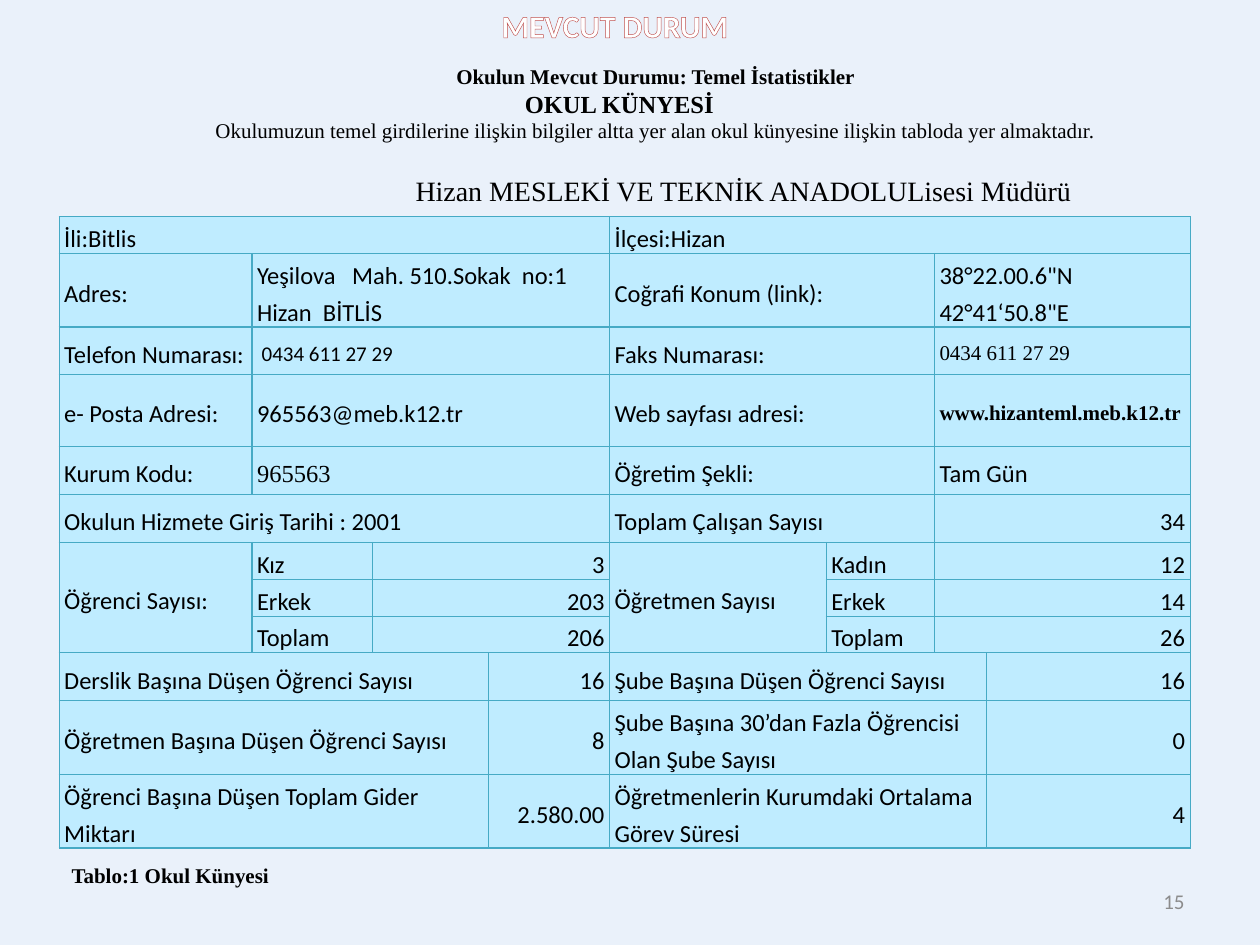
from typing import NamedTuple

from lxml import etree
from pptx import Presentation
from pptx.dml.color import RGBColor
from pptx.enum.text import MSO_ANCHOR, MSO_AUTO_SIZE, PP_ALIGN
from pptx.oxml.ns import qn
from pptx.util import Pt

LEFT, CENTER, RIGHT = PP_ALIGN.LEFT, PP_ALIGN.CENTER, PP_ALIGN.RIGHT
TOP, MIDDLE = MSO_ANCHOR.TOP, MSO_ANCHOR.MIDDLE
GROW = MSO_AUTO_SIZE.SHAPE_TO_FIT_TEXT
SANS, SERIF = "Calibri", "Times New Roman"
BLACK, WHITE, GRAY = "000000", "FFFFFF", "8C8C8C"
BACK, FILL, EDGE, RED = "EAF1FA", "BFECFF", "46AAC5", "C0504D"


class Line(NamedTuple):
    text: str
    size: float = 12
    face: str = SERIF
    bold: bool = False
    align: PP_ALIGN = LEFT
    color: str = BLACK
    indent: float = 0


class Box(NamedTuple):
    left: float
    top: float
    width: float
    height: float
    lines: list[Line]
    wrap: bool = True
    anchor: MSO_ANCHOR = TOP
    pad: float = 3.6


class Cell(NamedTuple):
    line: Line
    wide: int = 1
    tall: int = 1


def label(text: str, wide: int = 1, tall: int = 1) -> Cell:
    return Cell(Line(text, 14, SANS), wide, tall)


def count(text: str, wide: int = 1) -> Cell:
    return Cell(Line(text, 14, SANS, align=RIGHT), wide)


COLS = [110.2, 69.1, 66.2, 69.1, 123.8, 61.9, 29.5, 116.6]
LOW, MID, HIGH = 13.7, 27.4, 41
HEIGHTS = [17.3, MID, MID, HIGH, MID, MID, LOW, LOW, LOW, MID, HIGH, HIGH]

ROWS = [
    [label("İli:Bitlis", 4), label("İlçesi:Hizan", 4)],
    [label("Adres:"), label("Yeşilova   Mah. 510.Sokak  no:1 Hizan  BİTLİS", 3),
     label("Coğrafi Konum (link):", 2), label('38°22.00.6"N 42°41‘50.8"E', 2)],
    [label("Telefon Numarası:"), Cell(Line(" 0434 611 27 29", 12, SANS), 3),
     label("Faks Numarası:", 2), Cell(Line("0434 611 27 29"), 2)],
    [label("e- Posta Adresi:"), label("965563@meb.k12.tr", 3),
     label("Web sayfası adresi:", 2),
     Cell(Line("www.hizanteml.meb.k12.tr", bold=True), 2)],
    [label("Kurum Kodu:"), Cell(Line("965563", 14), 3),
     label("Öğretim Şekli:", 2), label("Tam Gün", 2)],
    [label("Okulun Hizmete Giriş Tarihi : 2001", 4),
     label("Toplam Çalışan Sayısı", 2), count("34", 2)],
    [label("Öğrenci Sayısı:", tall=3), label("Kız"), count("3", 2),
     label("Öğretmen Sayısı", tall=3), label("Kadın"), count("12", 2)],
    [label("Erkek"), count("203", 2), label("Erkek"), count("14", 2)],
    [label("Toplam"), count("206", 2), label("Toplam"), count("26", 2)],
    [label("Derslik Başına Düşen Öğrenci Sayısı", 3), count("16"),
     label("Şube Başına Düşen Öğrenci Sayısı", 3), count("16")],
    [label("Öğretmen Başına Düşen Öğrenci Sayısı", 3), count("8"),
     label("Şube Başına 30’dan Fazla Öğrencisi Olan Şube Sayısı", 3), count("0")],
    [label("Öğrenci Başına Düşen Toplam Gider Miktarı", 3), count("2.580.00"),
     label("Öğretmenlerin Kurumdaki Ortalama Görev Süresi", 3), count("4")],
]

BOXES = [
    Box(516.2, 500.4, 167.8, 28.8,
        [Line("15", 12, SANS, align=RIGHT, color=GRAY)], anchor=MIDDLE),
    Box(230.4, 95.8, 397.4, 26.6,
        [Line("Hizan MESLEKİ VE TEKNİK ANADOLULisesi Müdürü", 16)], wrap=False),
    Box(33.8, 22.3, 646.6, 92.2, [
        Line("Okulun Mevcut Durumu: Temel İstatistikler", bold=True,
             align=CENTER, indent=35.3),
        Line("OKUL KÜNYESİ", 14, bold=True, indent=259),
        Line("Okulumuzun temel girdilerine ilişkin bilgiler altta yer alan "
             "okul künyesine ilişkin tabloda yer almaktadır.",
             align=CENTER, indent=35.3),
    ], pad=13.9),
    Box(33.8, 489.6, 128.9, 21.6,
        [Line("Tablo:1 Okul Künyesi", bold=True)], wrap=False),
]


def paint(color: str) -> RGBColor:
    return RGBColor.from_string(color)


def stroke(parent, tag: str, color: str, width: float):
    """Add an outline element with a solid colour under parent."""
    line = etree.SubElement(parent, qn(tag), w=str(int(Pt(width))))
    fill = etree.SubElement(line, qn("a:solidFill"))
    etree.SubElement(fill, qn("a:srgbClr"), val=color)
    return line


def write(para, line: Line) -> None:
    para.text = line.text
    para.alignment = line.align
    font = para.font
    font.size, font.name, font.bold = Pt(line.size), line.face, line.bold
    font.color.rgb = paint(line.color)
    if line.indent:
        para._p.get_or_add_pPr().set("indent", str(int(Pt(line.indent))))


def place(shape, left: float, top: float, width: float, height: float) -> None:
    shape.left, shape.top = Pt(left), Pt(top)
    shape.width, shape.height = Pt(width), Pt(height)


def add_box(slide, box: Box) -> None:
    shape = slide.shapes.add_textbox(0, 0, 0, 0)
    place(shape, *box[:4])
    frame = shape.text_frame
    frame.word_wrap, frame.vertical_anchor = box.wrap, box.anchor
    frame.margin_top = frame.margin_bottom = Pt(box.pad)
    for i, line in enumerate(box.lines):
        write(frame.add_paragraph() if i else frame.paragraphs[0], line)


def add_title(slide) -> None:
    title = slide.shapes.title
    place(title, 22.3, 0, 658.1, 28.8)
    frame = title.text_frame
    frame.vertical_anchor, frame.auto_size = TOP, GROW
    para = frame.paragraphs[0]
    write(para, Line("MEVCUT DURUM", 18, SANS, True, CENTER, WHITE))
    stroke(para.runs[0]._r.get_or_add_rPr(), "a:ln", RED, 0.52)


def style(cell) -> None:
    for side in "LRTB":
        stroke(cell._tc.get_or_add_tcPr(), f"a:ln{side}", EDGE, 0.75)
    cell.fill.solid()
    cell.fill.fore_color.rgb = paint(FILL)
    cell.vertical_anchor = MIDDLE
    cell.margin_left = cell.margin_right = Pt(2.9)
    cell.margin_top = cell.margin_bottom = 0


def add_grid(slide) -> None:
    table = slide.shapes.add_table(
        len(ROWS), len(COLS), Pt(33.8), Pt(123.8),
        Pt(sum(COLS)), Pt(sum(HEIGHTS))).table
    table.first_row = table.horz_banding = False
    for col, width in zip(table.columns, COLS):
        col.width = Pt(width)
    for row, height in zip(table.rows, HEIGHTS):
        row.height = Pt(height)
    for cell in table.iter_cells():
        style(cell)
    for r, cells in enumerate(ROWS):
        c = 0
        for item in cells:
            while table.cell(r, c).is_spanned:
                c += 1
            cell = table.cell(r, c)
            if item.wide > 1 or item.tall > 1:
                cell.merge(table.cell(r + item.tall - 1, c + item.wide - 1))
            para = cell.text_frame.paragraphs[0]
            write(para, item.line)
            para.line_spacing, para.space_after = 1.25, Pt(8)
            c += item.wide


def main() -> None:
    deck = Presentation()
    deck.slide_width, deck.slide_height = Pt(720), Pt(540)
    slide = deck.slides.add_slide(deck.slide_layouts.get_by_name("Title Only"))
    back = slide.background.fill
    back.solid()
    back.fore_color.rgb = paint(BACK)
    add_title(slide)
    add_grid(slide)
    for box in BOXES:
        add_box(slide, box)
    deck.save("out.pptx")


if __name__ == "__main__":
    main()
